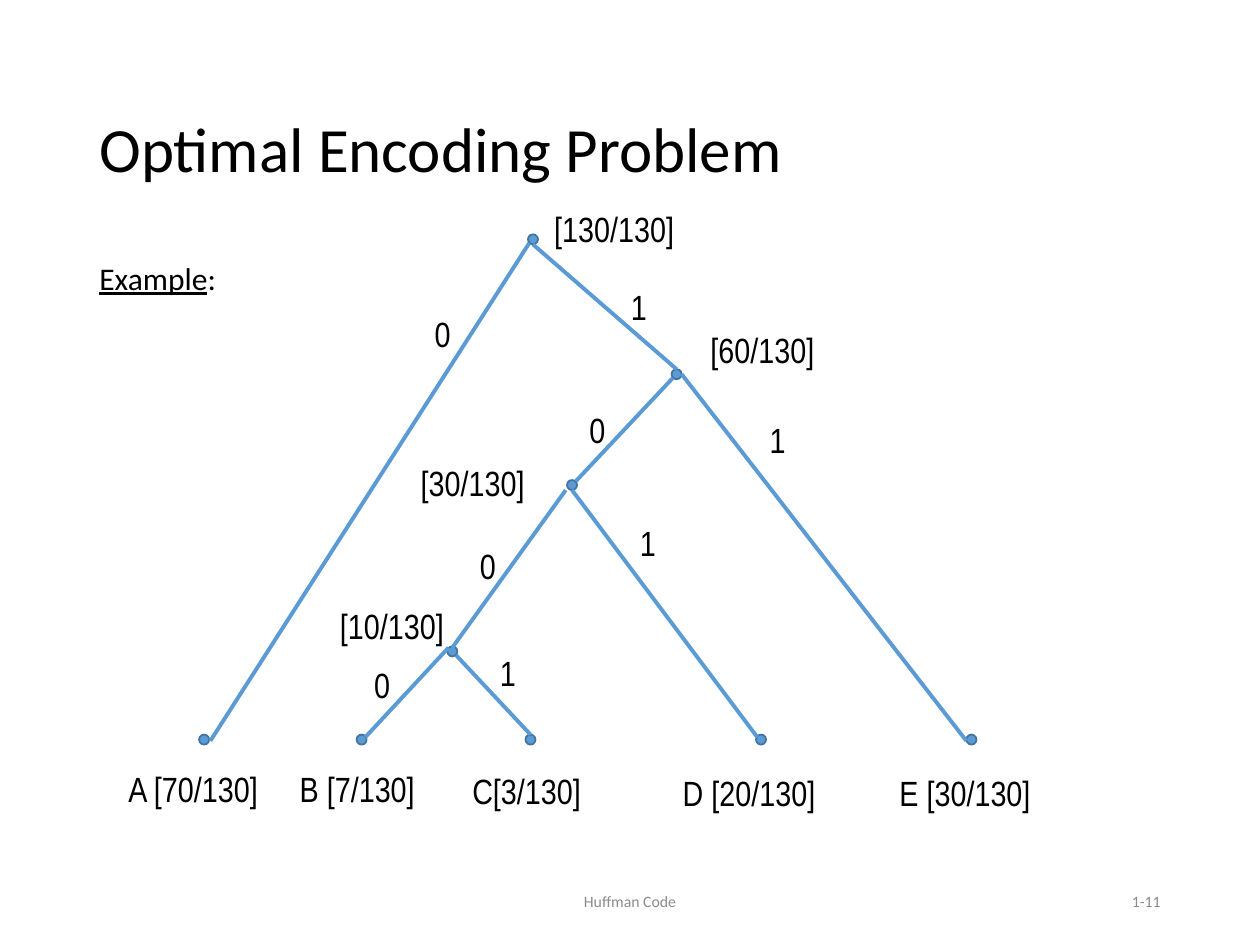
from lxml import etree
from pptx import Presentation
from pptx.dml.color import RGBColor
from pptx.enum import shapes, text
from pptx.oxml.ns import qn
from pptx.util import Inches, Pt


def color(value):
    return RGBColor.from_string(value)


def add_text(words, left, top, width, height, size, font="Calibri", ink="000000",
             align=text.PP_ALIGN.LEFT, anchor=text.MSO_ANCHOR.TOP):
    box = page.shapes.add_textbox(Inches(left), Inches(top), Inches(width), Inches(height))
    frame = box.text_frame
    frame.word_wrap = True
    frame.vertical_anchor = anchor
    para = frame.paragraphs[0]
    para.alignment = align
    para.font.size = Pt(size)
    para.font.name = font
    para.font.color.rgb = color(ink)
    para.add_run().text = words
    return box


deck = Presentation()
deck.slide_width = Inches(10)
deck.slide_height = Inches(7.5)
page = deck.slides.add_slide(deck.slide_layouts[6])

middle = text.MSO_ANCHOR.MIDDLE
title = add_text("Optimal Encoding Problem", 0.69, 0.4, 8.62, 1.45, 36, anchor=middle)
title_para = title.text_frame.paragraphs[0]
title_para.line_spacing = 1.15
title_para.space_before = Pt(6)

add_text("Huffman Code", 3.31, 6.95, 3.38, 0.4, 9, ink="8C8C8C",
         align=text.PP_ALIGN.CENTER, anchor=middle)
add_text("1-11", 7.06, 6.95, 2.25, 0.4, 9, ink="8C8C8C",
         align=text.PP_ALIGN.RIGHT, anchor=middle)

example = add_text("Example", 0.69, 2.04, 8.62, 4.76, 18)
example_para = example.text_frame.paragraphs[0]
example_para.line_spacing = 0.9
example_para.space_before = Pt(7.5)
example_para.runs[0].font.underline = True
example_para.add_run().text = ":"

leaf_top = 5.83
nodes = [(4.19, 1.86), (5.33, 2.93), (4.5, 3.81), (3.55, 5.13)]
nodes += [(left, leaf_top) for left in (1.58, 2.83, 4.17, 6, 7.67)]
for left, top in nodes:
    dot = page.shapes.add_shape(shapes.MSO_SHAPE.OVAL, Inches(left), Inches(top),
                                Inches(0.08), Inches(0.08))
    dot.shadow.inherit = False
    dot.fill.solid()
    dot.fill.fore_color.rgb = color("5B9BD5")
    dot.line.color.rgb = color("43739E")
    dot.line.width = Pt(1)

branches = [
    (4.2, 1.93, 1.67, 5.88), (4.23, 1.94, 5.37, 2.93),
    (5.34, 3, 4.57, 3.82), (5.41, 2.97, 7.67, 5.88),
    (4.49, 3.89, 3.59, 5.14), (4.54, 3.89, 6.01, 5.85),
    (3.56, 5.14, 2.9, 5.85), (3.62, 5.2, 4.21, 5.83),
]
for ends in branches:
    branch = page.shapes.add_connector(shapes.MSO_CONNECTOR.STRAIGHT,
                                       *[Inches(value) for value in ends])
    branch.line.color.rgb = color("5B9BD5")
    branch.line.width = Pt(2.25)
    etree.SubElement(branch._element.spPr, qn("a:effectLst"))

labels = [
    ("[130/130]", 4.3, 1.6, 1.35), ("[60/130]", 5.54, 2.56, 1.03),
    ("[30/130]", 3.24, 3.61, 1.03), ("[10/130]", 2.6, 4.75, 1.03),
    ("A [70/130]", 0.92, 6.04, 1.24), ("B [7/130]", 2.28, 6.04, 1.12),
    ("C[3/130]", 3.65, 6.06, 1.07), ("D [20/130]", 5.32, 6.07, 1.35),
    ("E [30/130]", 7.04, 6.07, 1.25),
    ("0", 3.35, 2.43, 0.35), ("1", 4.91, 2.22, 0.36),
    ("0", 4.58, 3.19, 0.35), ("1", 6.01, 3.27, 0.36),
    ("0", 3.71, 4.27, 0.35), ("1", 4.98, 4.09, 0.36),
    ("0", 2.87, 5.22, 0.35), ("1", 3.87, 5.12, 0.36),
]
for words, left, top, width in labels:
    label = add_text(words, left, top, width, 0.44, 20, "Arial Narrow")
    label.text_frame.margin_right = 0

deck.save("out.pptx")
